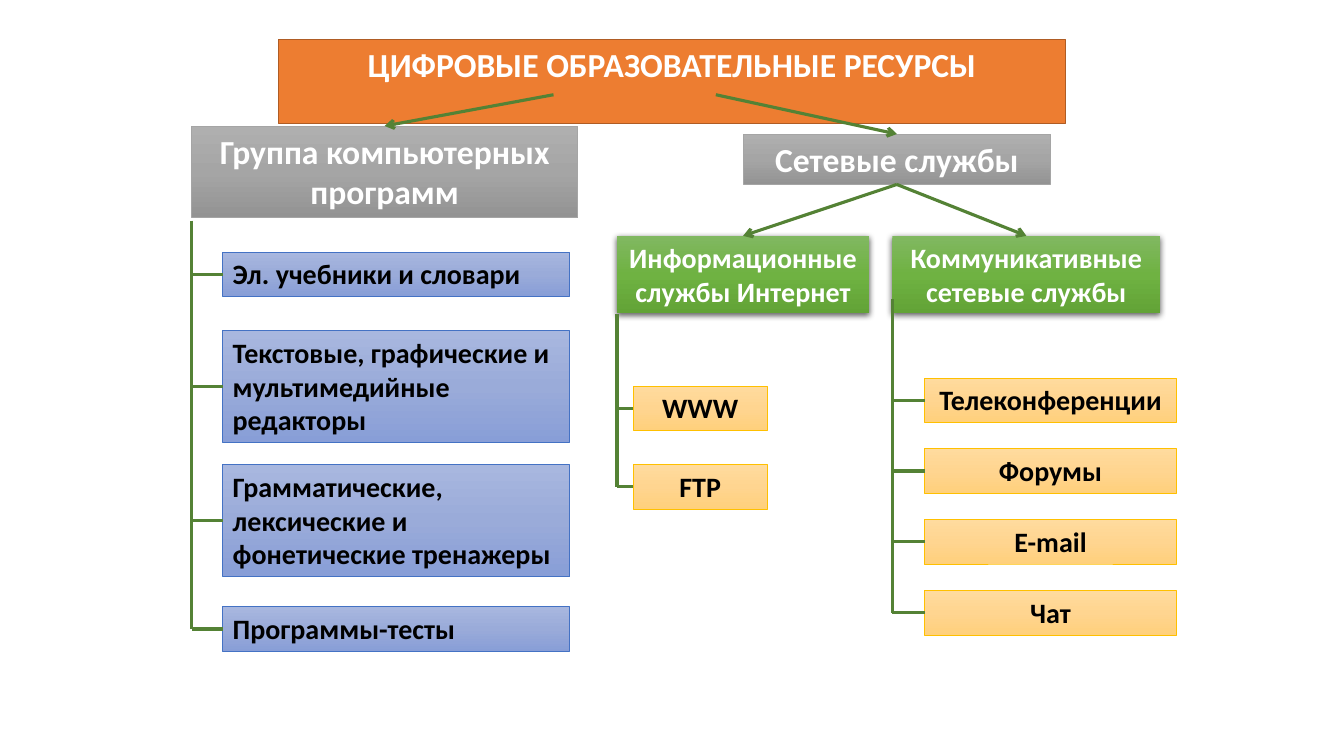
from copy import deepcopy
from dataclasses import dataclass

from lxml.etree import SubElement
from pptx import Presentation
from pptx.dml.color import RGBColor
from pptx.enum.shapes import MSO_CONNECTOR, MSO_SHAPE
from pptx.enum.text import MSO_ANCHOR, MSO_AUTO_SIZE, PP_ALIGN
from pptx.oxml.ns import qn
from pptx.util import Inches, Pt


@dataclass(frozen=True)
class Style:
    fill: tuple
    text: str
    size: int
    line: str = ""
    line_width: float = 0.5
    align: PP_ALIGN = PP_ALIGN.CENTER
    shadow: bool = False


@dataclass(frozen=True)
class Theme:
    font: str = "Calibri"
    connector: str = "548235"
    connector_width: float = 2.25
    title: Style = Style(("ED7D31",), "FFFFFF", 24, "AF5C24", 1)
    group: Style = Style(("AFAFAF", "A5A5A5", "939393"), "FFFFFF", 24, "A5A5A5")
    service: Style = Style(("81B861", "6FB242", "62A336"), "FFFFFF", 20, shadow=True)
    program: Style = Style(("A8B7DF", "9AABD9", "889ED7"), "000000", 20, "4472C4",
                           align=PP_ALIGN.LEFT)
    example: Style = Style(("FFDB9E", "FFD590", "FFD07C"), "000000", 20, "FFC000")


THEME = Theme()
LEAF_HEIGHT = 0.44
TALL_LEAF_HEIGHT = 1.11

TITLE = ("ЦИФРОВЫЕ ОБРАЗОВАТЕЛЬНЫЕ РЕСУРСЫ", (2.76, 0.39, 7.81, 0.5))
PROGRAMS = ("Группа компьютерных программ", (1.9, 1.25, 3.83, 0.91))
NETWORK = ("Сетевые службы", (7.37, 1.33, 3.05, 0.5))
INFORMATION = ("Информационные службы Интернет", (6.12, 2.34, 2.5, 0.77))
COMMUNICATION = ("Коммуникативные сетевые службы", (8.85, 2.34, 2.66, 0.77))

PROGRAM_LEAVES = [
    ("Эл. учебники и словари", 2.5, LEAF_HEIGHT),
    ("Текстовые, графические и мультимедийные редакторы", 3.28, TALL_LEAF_HEIGHT),
    ("Грамматические, лексические и фонетические тренажеры", 4.61, TALL_LEAF_HEIGHT),
    ("Программы-тесты", 6.02, LEAF_HEIGHT),
]


def even_leaves(words, top, pitch):
    return [(word, top + i * pitch, LEAF_HEIGHT) for i, word in enumerate(words)]


BRANCHES = [
    (PROGRAMS, THEME.group, 2.19, 2.21, 3.44, THEME.program, PROGRAM_LEAVES),
    (INFORMATION, THEME.service, 3.12, 6.28, 1.33, THEME.example,
     even_leaves(["WWW", "FTP"], 3.83, 0.78)),
    (COMMUNICATION, THEME.service, 2.97, 9.17, 2.5, THEME.example,
     even_leaves(["Телеконференции", "Форумы", "E-mail", "Чат"], 3.75, 0.703)),
]
TITLE_ARROW_TOP = 0.94
TITLE_ARROWS = [(5.49, PROGRAMS), (7.1, NETWORK)]


def paint(box, style):
    if len(style.fill) == 1:
        box.fill.solid()
        box.fill.fore_color.rgb = RGBColor.from_string(style.fill[0])
        return
    box.fill.gradient()
    box.fill.gradient_angle = 270
    stop_list = box._element.spPr.find(qn("a:gradFill")).find(qn("a:gsLst"))
    stop_list.insert(1, deepcopy(stop_list[0]))
    for i, (stop, color) in enumerate(zip(box.fill.gradient_stops, style.fill)):
        stop.position = i / 2
        stop.color.rgb = RGBColor.from_string(color)


def cast_shadow(box):
    effects = box._element.spPr.find(qn("a:effectLst"))
    shadow = SubElement(effects, qn("a:outerShdw"), blurRad=str(Pt(4.5)),
                        dist=str(Pt(1.5)), dir="5400000", algn="ctr", rotWithShape="0")
    black = SubElement(shadow, qn("a:srgbClr"), val="000000")
    SubElement(black, qn("a:alpha"), val="63000")


def format_box(box, words, place, style):
    box.left, box.top, box.width, box.height = map(Inches, place)
    paint(box, style)
    if style.line:
        box.line.color.rgb = RGBColor.from_string(style.line)
        box.line.width = Pt(style.line_width)
    else:
        box.line.fill.background()

    frame = box.text_frame
    frame.word_wrap = True
    frame.auto_size = MSO_AUTO_SIZE.SHAPE_TO_FIT_TEXT
    frame.vertical_anchor = MSO_ANCHOR.TOP
    paragraph = frame.paragraphs[0]
    paragraph.alignment = style.align
    run = paragraph.add_run()
    run.text = words
    run.font.name = THEME.font
    run.font.size = Pt(style.size)
    run.font.bold = True
    run.font.color.rgb = RGBColor.from_string(style.text)


def add_box(slide, words, place, style):
    box = slide.shapes.add_shape(MSO_SHAPE.RECTANGLE, *map(Inches, place))
    box.shadow.inherit = False
    format_box(box, words, place, style)
    if style.shadow:
        cast_shadow(box)
    return box


def add_line(slide, start, end, arrow=False):
    line = slide.shapes.add_connector(MSO_CONNECTOR.STRAIGHT, *map(Inches, start + end))
    line.line.color.rgb = RGBColor.from_string(THEME.connector)
    line.line.width = Pt(THEME.connector_width)
    SubElement(line._element.spPr, qn("a:effectLst"))
    if arrow:
        SubElement(line.line._get_or_add_ln(), qn("a:tailEnd"), type="arrow")
    return line


def add_branch(slide, header, trunk_top, leaf_left, leaf_width, style, leaves):
    trunk_x = header[1][0]
    for words, top, height in leaves:
        leaf = add_box(slide, words, (leaf_left, top, leaf_width, height), style)
        middle = top + height / 2
        twig = add_line(slide, (trunk_x, middle), (leaf_left, middle))
        twig.end_connect(leaf, 1)
    add_line(slide, (trunk_x, trunk_top), (trunk_x, middle))


def top_middle(place):
    left, top, width, _ = place
    return left + width / 2, top


def main():
    deck = Presentation()
    deck.slide_width, deck.slide_height = Inches(13.33), Inches(7.5)
    slide = deck.slides.add_slide(deck.slide_layouts[5])
    format_box(slide.shapes.title, *TITLE, THEME.title)

    headers = {NETWORK: add_box(slide, *NETWORK, THEME.group)}
    for header, header_style, *branch in BRANCHES:
        headers[header] = add_box(slide, *header, header_style)
        add_branch(slide, header, *branch)

    for start_x, group in TITLE_ARROWS:
        arrow = add_line(slide, (start_x, TITLE_ARROW_TOP), top_middle(group[1]), True)
        arrow.end_connect(headers[group], 0)

    network_x, network_top = top_middle(NETWORK[1])
    network_bottom = network_top + NETWORK[1][3]
    for service in (INFORMATION, COMMUNICATION):
        arrow = add_line(slide, (network_x, network_bottom), top_middle(service[1]), True)
        arrow.begin_connect(headers[NETWORK], 2)
        arrow.end_connect(headers[service], 0)

    deck.save("out.pptx")


if __name__ == "__main__":
    main()
